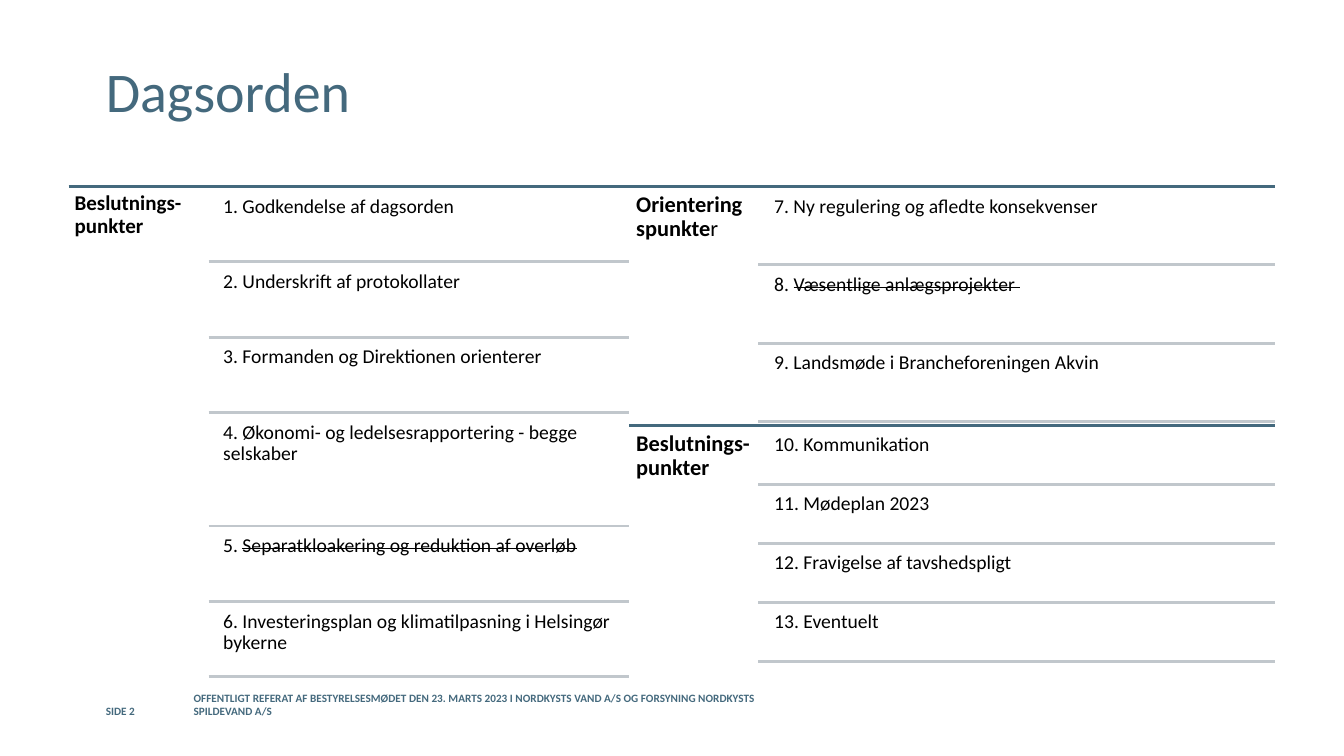
from collections import namedtuple
from dataclasses import dataclass

from lxml import etree
from pptx import Presentation
from pptx.dml.color import RGBColor
from pptx.enum.shapes import MSO_CONNECTOR
from pptx.enum.text import MSO_ANCHOR
from pptx.oxml.ns import qn
from pptx.util import Inches, Pt


@dataclass(frozen=True)
class Theme:
    font: str = "Calibri"
    accent: RGBColor = RGBColor(0x44, 0x69, 0x7D)
    rule: RGBColor = RGBColor(0xC1, 0xC7, 0xCC)
    ink: RGBColor = RGBColor(0, 0, 0)
    title: int = 40
    item: int = 14
    footer: int = 8
    rule_width: int = 2


THEME = Theme()
Box = namedtuple("Box", "x y w h")
Item = namedtuple("Item", "text struck height", defaults=(False, 1))
Section = namedtuple("Section", "box label tail label_size label_share inset items")

GAP = 0.05         # gap between rows, as a share of a normal row
ITEM_INDENT = 0.015  # of the section width

LEFT = Box(0.68, 1.85, 5.56, 4.9)
RIGHT_TOP = Box(LEFT.x + LEFT.w, LEFT.y, 6.41, 2.37)
RIGHT_BOTTOM = RIGHT_TOP._replace(y=RIGHT_TOP.y + RIGHT_TOP.h)

SECTIONS = [
    Section(LEFT, "Beslutnings-punkter", "", 15, 0.25, 0.06, [
        Item("Godkendelse af dagsorden"),
        Item("Underskrift af protokollater"),
        Item("Formanden og Direktionen orienterer"),
        Item("Økonomi- og ledelsesrapportering - begge selskaber", height=1.53),
        Item("Separatkloakering og reduktion af overløb", struck=True),
        Item("Investeringsplan og klimatilpasning i Helsingør bykerne"),
    ]),
    Section(RIGHT_TOP, "Orienteringspunkte", "r", 16, 0.2, 0.07, [
        Item("Ny regulering og afledte konsekvenser"),
        Item("Væsentlige anlægsprojekter ", struck=True),
        Item("Landsmøde i Brancheforeningen Akvin"),
    ]),
    Section(RIGHT_BOTTOM, "Beslutnings-punkter", "", 16, 0.2, 0.07, [
        Item("Kommunikation"),
        Item("Mødeplan 2023"),
        Item("Fravigelse af tavshedspligt"),
        Item("Eventuelt"),
    ]),
]


def add_text(s, box, text, size, color, inset=0, anchor=MSO_ANCHOR.TOP):
    """Add a one-paragraph text box and return its paragraph."""
    tf = s.shapes.add_textbox(*map(Inches, box)).text_frame
    tf.word_wrap = True
    tf.vertical_anchor = anchor
    tf.margin_left = tf.margin_right = Inches(inset)
    tf.margin_top = tf.margin_bottom = Inches(inset)
    p = tf.paragraphs[0]
    p.font.name, p.font.size = THEME.font, Pt(size)
    p.font.color.rgb = color
    p.add_run().text = text
    return p


def add_rule(s, x, y, w, color):
    line = s.shapes.add_connector(MSO_CONNECTOR.STRAIGHT, Inches(x), Inches(y),
                                  Inches(x + w), Inches(y))
    line.line.color.rgb = color
    line.line.width = Pt(THEME.rule_width)
    etree.SubElement(line._element.spPr, qn("a:effectLst"))


def add_item(s, box, number, item):
    p = add_text(s, box, f"{number}. ", THEME.item, THEME.ink, inset=0.06)
    p.line_spacing = 0.9
    r = p.add_run()
    r.text = item.text
    if item.struck:
        r.font._element.set("strike", "sngStrike")


def add_section(s, section, first_number):
    """Draw a label beside numbered rows, each closed by a rule."""
    box, items = section.box, section.items
    label_w = box.w * section.label_share
    add_rule(s, box.x, box.y, box.w, THEME.accent)
    p = add_text(s, box._replace(w=label_w), section.label, section.label_size,
                 THEME.ink, section.inset)
    p.line_spacing = 0.9
    p.runs[0].font.bold = True
    if section.tail:
        p.add_run().text = section.tail

    row = box.h / (sum(i.height for i in items) + GAP * (len(items) + 1))
    rule_x, indent = box.x + label_w, box.w * ITEM_INDENT
    rule_w = box.w - label_w
    y = box.y
    for number, item in enumerate(items, first_number):
        y += GAP * row
        h = item.height * row
        add_item(s, Box(rule_x + indent, y, rule_w - indent, h), number, item)
        y += h
        add_rule(s, rule_x, y, rule_w, THEME.rule)


def add_title(s, box, text):
    add_text(s, box, text, THEME.title, THEME.accent, anchor=MSO_ANCHOR.BOTTOM)


def add_footer(s, box, page, text):
    page_w, text_x = 0.68, 0.87
    parts = [(box._replace(w=page_w), page),
             (box._replace(x=box.x + text_x, w=box.w - text_x), text)]
    for part, words in parts:
        p = add_text(s, part, words, THEME.footer, THEME.accent,
                     anchor=MSO_ANCHOR.BOTTOM)
        p.font.bold = True


def add_agenda_slide(prs):
    s = prs.slides.add_slide(prs.slide_layouts[6])
    number = 1
    for section in SECTIONS:
        add_section(s, section, number)
        number += len(section.items)
    add_title(s, Box(1.05, 0.21, 11.84, 1.02), "Dagsorden")
    add_footer(s, Box(1.05, 6.93, 6.93, 0.19), "SIDE 2",
               "OFFENTLIGT REFERAT AF BESTYRELSESMØDET DEN 23. MARTS 2023 "
               "I NORDKYSTS VAND A/S OG FORSYNING NORDKYSTS SPILDEVAND A/S")


def main():
    prs = Presentation()
    prs.slide_width, prs.slide_height = Inches(13.33), Inches(7.5)
    add_agenda_slide(prs)
    prs.save("out.pptx")


if __name__ == "__main__":
    main()
